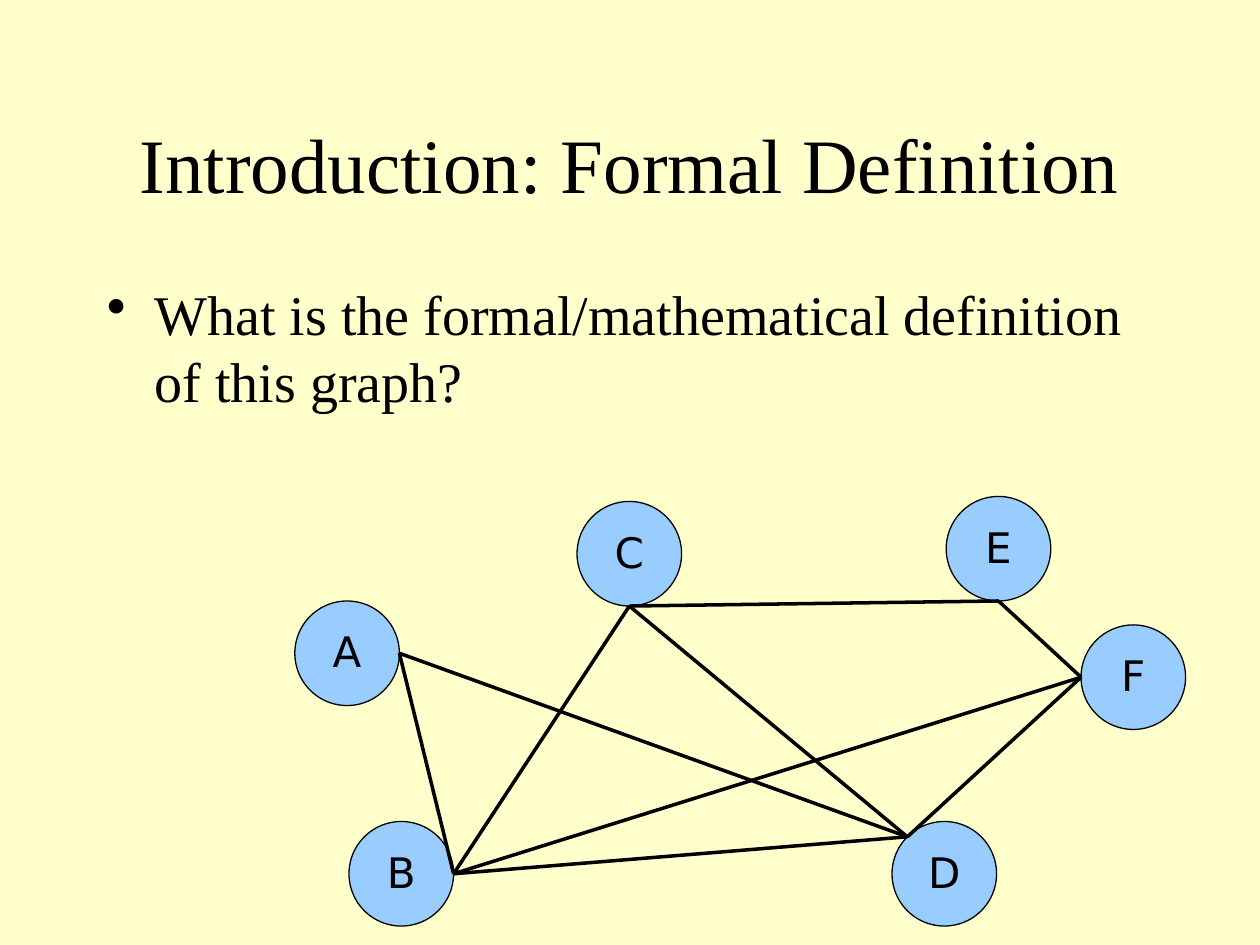
import math

import pptx
import pptx.dml.color
import pptx.enum.shapes
import pptx.enum.text
import pptx.oxml.ns
import pptx.util
from lxml import etree
from pptx.util import Inches

CREAM = pptx.dml.color.RGBColor(0xFF, 0xFF, 0xCC)
SKY = pptx.dml.color.RGBColor(0x99, 0xCC, 0xFF)
BLACK = pptx.dml.color.RGBColor(0, 0, 0)
DIAMETER = 0.83

# Node: left, top, and the angle (degrees, clockwise from right) where edges meet it
NODES = {
    "D": (7.08, 6.52, 225),
    "E": (7.51, 3.94, 90),
    "F": (8.58, 4.96, 180),
    "C": (4.58, 3.98, 90),
    "B": (2.77, 6.52, 0),
    "A": (2.34, 4.77, 0),
}
EDGES = ["CD", "CE", "DA", "AB", "FB", "FE", "DB", "CB", "DF"]


def set_font(para, name, size):
    para.font.name = name
    para.font.size = pptx.util.Pt(size)
    para.font.color.rgb = BLACK


deck = pptx.Presentation()
deck.slide_width = Inches(10)
deck.slide_height = Inches(7.5)
page = deck.slides.add_slide(deck.slide_layouts[5])
page.background.fill.solid()
page.background.fill.fore_color.rgb = CREAM

title = page.shapes.title
title.left, title.top = Inches(0.75), Inches(0.67)
title.width, title.height = Inches(8.5), Inches(1.25)
title.text_frame.text = "Introduction: Formal Definition"
title.text_frame.vertical_anchor = pptx.enum.text.MSO_ANCHOR.MIDDLE
para = title.text_frame.paragraphs[0]
para.alignment = pptx.enum.text.PP_ALIGN.CENTER
set_font(para, "Times New Roman", 44)

question = page.shapes.add_textbox(Inches(0.75), Inches(2.17), Inches(8.5), Inches(4.5))
question.text_frame.word_wrap = True
para = question.text_frame.paragraphs[0]
para.text = "What is the formal/mathematical definition of this graph?"
para.space_before = pptx.util.Pt(6.4)
set_font(para, "Times New Roman", 32)
properties = para._p.get_or_add_pPr()
properties.set("marL", str(Inches(0.38)))
properties.set("indent", str(Inches(-0.38)))
bullet = etree.Element(pptx.oxml.ns.qn("a:buChar"), char="•")
properties.find(pptx.oxml.ns.qn("a:spcBef")).addnext(bullet)

joints = {}
for name, (left, top, angle) in NODES.items():
    node = page.shapes.add_shape(
        pptx.enum.shapes.MSO_SHAPE.OVAL,
        Inches(left), Inches(top), Inches(DIAMETER), Inches(DIAMETER))
    node.shadow.inherit = False
    node.fill.solid()
    node.fill.fore_color.rgb = SKY
    node.line.color.rgb = BLACK
    node.line.width = pptx.util.Pt(0.75)
    frame = node.text_frame
    frame.text = name
    frame.word_wrap = False
    frame.vertical_anchor = pptx.enum.text.MSO_ANCHOR.MIDDLE
    para = frame.paragraphs[0]
    para.alignment = pptx.enum.text.PP_ALIGN.CENTER
    para.line_spacing = 0.96
    set_font(para, "DejaVu Sans", 24)

    radius = DIAMETER / 2
    turn = math.radians(angle)
    joints[name] = (Inches(left + radius + radius * math.cos(turn)),
                    Inches(top + radius + radius * math.sin(turn)))

for start, end in EDGES:
    edge = page.shapes.add_connector(
        pptx.enum.shapes.MSO_CONNECTOR.STRAIGHT, *joints[start], *joints[end])
    edge.line.color.rgb = BLACK
    edge.line.width = pptx.util.Pt(2)
    etree.SubElement(edge._element.spPr, pptx.oxml.ns.qn("a:effectLst"))

deck.save("out.pptx")
